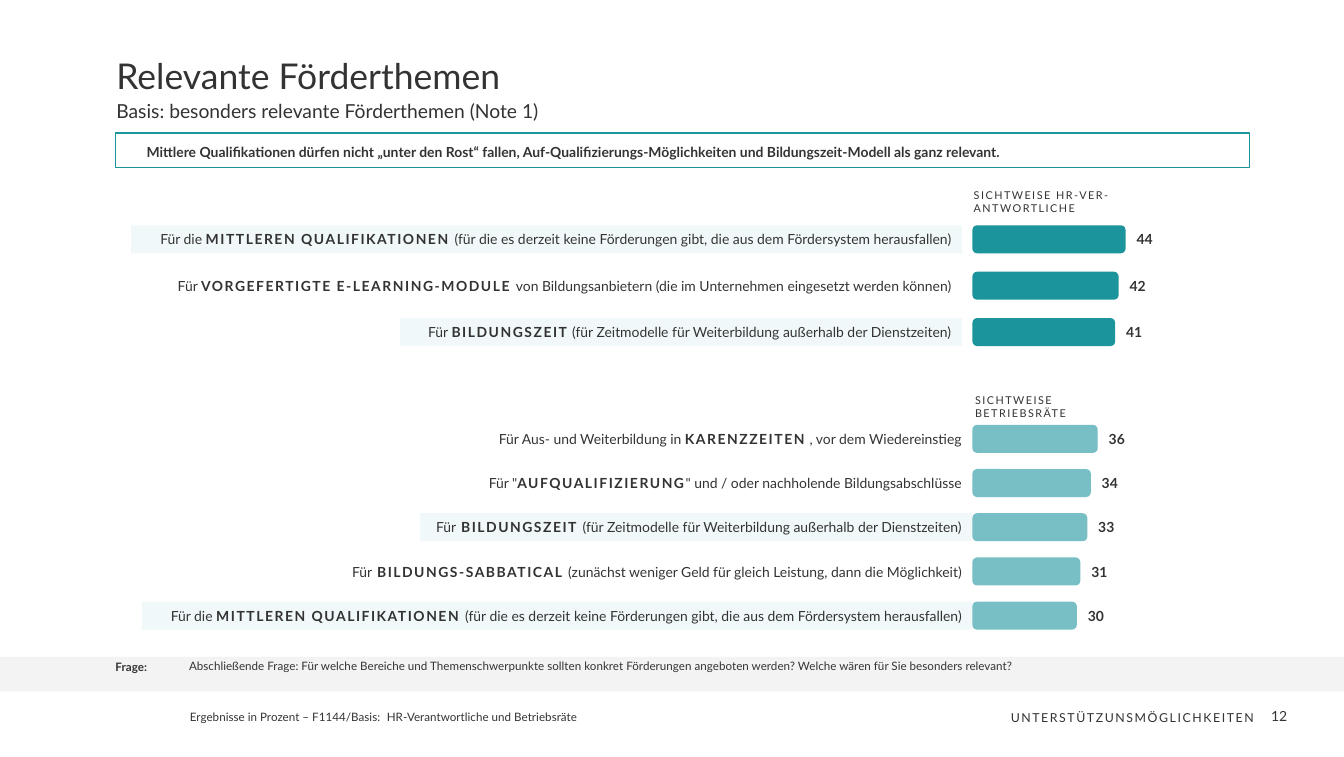
from dataclasses import dataclass
from typing import Any

from pptx import Presentation
from pptx.dml.color import RGBColor
from pptx.enum.shapes import MSO_SHAPE
from pptx.enum.text import MSO_ANCHOR, PP_ALIGN
from pptx.util import Cm, Pt

TEAL, LIGHT_TEAL, PALE, GREY, INK = "1C949C", "77BFC4", "F1F8F9", "F3F3F3", "333333"
BAR_LEFT, BAR_HEIGHT = 22.22, 0.64
BAR_MAX, VALUE_MAX = 3.5, 44
NO_INSETS = (0, 0, 0, 0)
BODY_INSETS = (0, 0, 0.25, 0.13)
SHAPE_INSETS = (0.25, 0.13, 0.25, 0.13)


@dataclass
class Run:
    text: str
    bold: bool = False
    spaced: bool = False


@dataclass
class Text:
    box: tuple[float, float, float, float]
    lines: list[list[Run]]
    size: float
    insets: tuple[float, float, float, float] = NO_INSETS
    anchor: MSO_ANCHOR = MSO_ANCHOR.TOP
    align: PP_ALIGN = PP_ALIGN.LEFT
    spacing: Any = None


@dataclass
class Topic:
    left: float
    before: str
    strong: str
    after: str
    value: int
    marked: bool = False


@dataclass
class Group:
    heading: list[str]
    heading_box: tuple[float, float, float, float]
    top: float
    pitch: float
    label_right: float
    color: str
    topics: list[Topic]


GROUPS = [
    Group(["SICHTWEISE HR-VER-", "ANTWORTLICHE"], (22, 4.19, 4.42, 0.86), 5.15, 1.06, 21.98, TEAL, [
        Topic(3, "Für die ", "MITTLEREN QUALIFIKATIONEN ",
              "(für die es derzeit keine Förderungen gibt, die aus dem Fördersystem herausfallen)", 44, True),
        Topic(3.6, "Für ", "VORGEFERTIGTE E-LEARNING-MODULE ",
              "von Bildungsanbietern (die im Unternehmen eingesetzt werden können)", 42),
        Topic(9.14, "Für ", "BILDUNGSZEIT",
              " (für Zeitmodelle für Weiterbildung außerhalb der Dienstzeiten)", 41, True),
    ]),
    Group(["SICHTWEISE", "BETRIEBSRÄTE"], (22.03, 8.86, 2.75, 0.86), 9.71, 1.01, 22.22, LIGHT_TEAL, [
        Topic(11.1, "Für Aus- und Weiterbildung in ", "KARENZZEITEN", " , vor dem Wiedereinstieg", 36),
        Topic(10.85, 'Für "', "AUFQUALIFIZIERUNG", '" und / oder nachholende Bildungsabschlüsse', 34),
        Topic(9.6, "Für", " BILDUNGSZEIT ",
              "(für Zeitmodelle für Weiterbildung außerhalb der Dienstzeiten)", 33, True),
        Topic(7.52, "Für", " BILDUNGS-SABBATICAL ",
              "(zunächst weniger Geld für gleich Leistung, dann die Möglichkeit)", 31),
        Topic(3.25, "Für die ", "MITTLEREN QUALIFIKATIONEN ",
              "(für die es derzeit keine Förderungen gibt, die aus dem Fördersystem herausfallen)", 30, True),
    ]),
]

TEXTS = [
    Text((2.66, 1.32, 21.4, 1.02), [[Run("Relevante Förderthemen")]], 23, BODY_INSETS, spacing=Pt(25.3)),
    Text((2.66, 2.26, 21.4, 0.61), [[Run("Basis: besonders relevante Förderthemen (Note 1)")]], 12.5,
         BODY_INSETS, spacing=Pt(15)),
    Text((3.35, 3.07, 25.2, 0.79),
         [[Run("Mittlere Qualifikationen dürfen nicht „unter den Rost“ fallen, Auf-Qualifizierungs-Möglichkeiten "
               "und Bildungszeit-Modell als ganz relevant.", True)]], 9, anchor=MSO_ANCHOR.MIDDLE),
    Text((2.64, 15.09, 1.02, 0.46), [[Run("Frage:", True)]], 7.5),
    Text((4.32, 15.06, 24.23, 0.71),
         [[Run("Abschließende Frage: Für welche Bereiche und Themenschwerpunkte sollten konkret Förderungen "
               "angeboten werden? Welche wären für Sie besonders relevant?")]], 7.5, BODY_INSETS),
    Text((4.34, 16.23, 4.45, 0.33), [[Run("Ergebnisse in Prozent – F1144/Basis:")]], 7.5),
    Text((8.84, 16.1, 10, 0.58), [[Run("HR-Verantwortliche und Betriebsräte")]], 7.5,
         anchor=MSO_ANCHOR.MIDDLE),
    Text((22.66, 16.13, 6.25, 0.58), [[Run("UNTERSTÜTZUNSMÖGLICHKEITEN", spaced=True)]], 8,
         SHAPE_INSETS, align=PP_ALIGN.RIGHT, spacing=0.9),
    Text((28.52, 16.05, 0.89, 0.51), [[Run("12")]], 9, (0.25, 0.13, 0, 0), align=PP_ALIGN.RIGHT),
]


def rgb(color: str) -> RGBColor:
    return RGBColor.from_string(color)


def set_all(obj: Any, values: dict[str, Any]) -> None:
    for name, value in values.items():
        setattr(obj, name, value)


def write(sp: Any, text: Text) -> None:
    tf = sp.text_frame
    left, top, right, bottom = map(Cm, text.insets)
    set_all(tf, {"word_wrap": True, "vertical_anchor": text.anchor, "margin_left": left,
                 "margin_top": top, "margin_right": right, "margin_bottom": bottom})
    for i, line in enumerate(text.lines):
        p = tf.add_paragraph() if i else tf.paragraphs[0]
        set_all(p, {"alignment": text.align, "line_spacing": text.spacing})
        for run in line:
            r = p.add_run()
            r.text = run.text
            set_all(r.font, {"name": "Lato", "size": Pt(text.size), "bold": run.bold})
            r.font.color.rgb = rgb(INK)
            if run.spaced:
                r._r.get_or_add_rPr().set("spc", "100")


def add_text(s: Any, text: Text) -> None:
    write(s.shapes.add_textbox(*map(Cm, text.box)), text)


def add_block(s: Any, kind: MSO_SHAPE, box: tuple[float, float, float, float],
              fill: str | None = None, line: str | None = None) -> Any:
    sp = s.shapes.add_shape(kind, *map(Cm, box))
    sp.shadow.inherit = False
    if fill:
        sp.fill.solid()
        sp.fill.fore_color.rgb = rgb(fill)
    else:
        sp.fill.background()
    if line:
        sp.line.color.rgb = rgb(line)
        sp.line.width = Pt(0.75)
    else:
        sp.line.fill.background()
    return sp


def add_topic(s: Any, group: Group, topic: Topic, top: float) -> None:
    box = (topic.left, top, group.label_right - topic.left, BAR_HEIGHT)
    runs = [Run(topic.before), Run(topic.strong, True, True), Run(topic.after)]
    label = Text(box, [runs], 9, (0, 0.13, 0.25, 0.13), MSO_ANCHOR.MIDDLE, PP_ALIGN.RIGHT)
    if topic.marked:
        write(add_block(s, MSO_SHAPE.RECTANGLE, box, PALE), label)
    else:
        add_text(s, label)
    width = BAR_MAX * topic.value / VALUE_MAX
    add_block(s, MSO_SHAPE.ROUNDED_RECTANGLE, (BAR_LEFT, top, width, BAR_HEIGHT), group.color)
    add_text(s, Text((BAR_LEFT + width, top, 0.94, BAR_HEIGHT), [[Run(str(topic.value), True)]], 9,
                     (0.25, 0.13, 0, 0.13), MSO_ANCHOR.MIDDLE))


def main() -> None:
    prs = Presentation()
    set_all(prs, {"slide_width": Cm(30.71), "slide_height": Cm(17.3)})
    s = prs.slides.add_slide(prs.slide_layouts[6])
    add_block(s, MSO_SHAPE.RECTANGLE, (0, 15.01, 30.71, 0.79), GREY)
    add_block(s, MSO_SHAPE.RECTANGLE, (2.64, 3.04, 25.91, 0.79), line=TEAL)
    for text in TEXTS:
        add_text(s, text)
    for group in GROUPS:
        lines = [[Run(line, spaced=True)] for line in group.heading]
        add_text(s, Text(group.heading_box, lines, 7, SHAPE_INSETS))
        for i, topic in enumerate(group.topics):
            add_topic(s, group, topic, group.top + i * group.pitch)
    prs.save("out.pptx")


if __name__ == "__main__":
    main()
